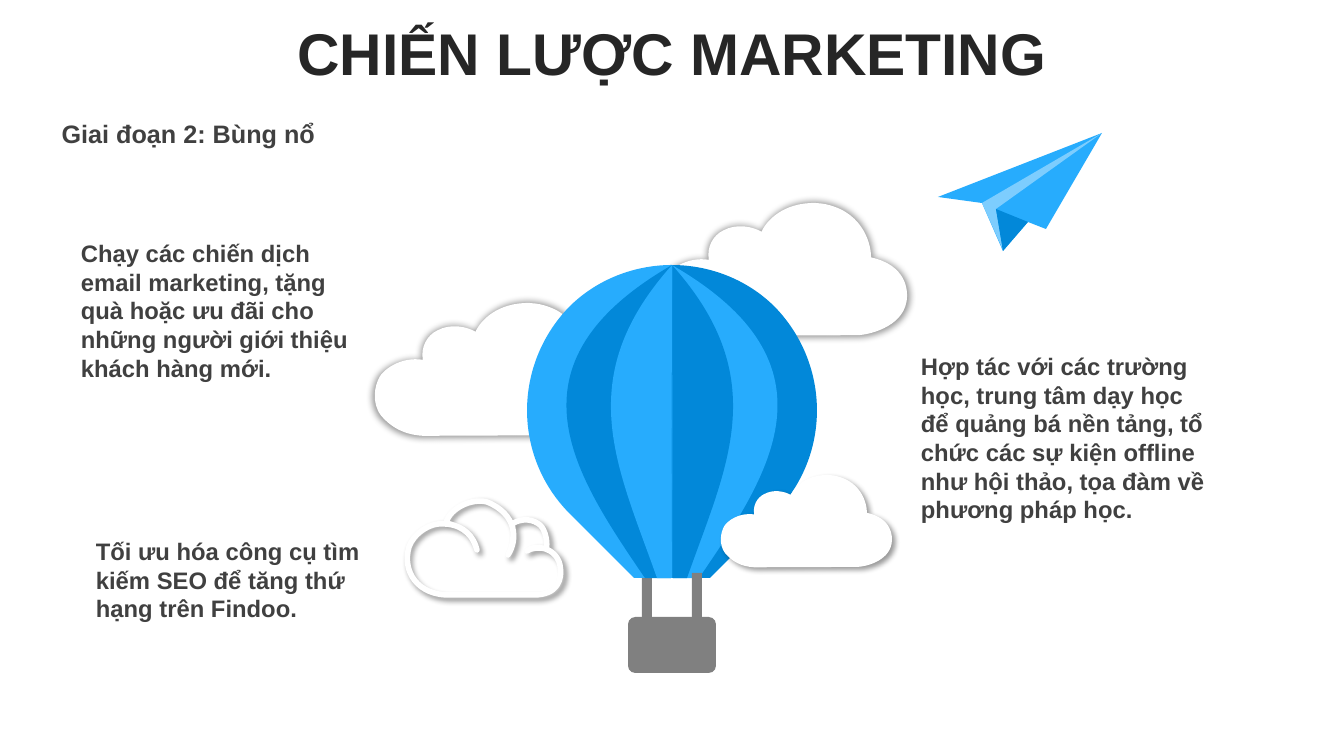
import math
import pptx
import pptx.util
import pptx.dml.color
import pptx.enum.shapes
import pptx.enum.text
import pptx.oxml.ns
import lxml.etree

COLOURS = {"title": "262626", "text": "404040", "white": "FFFFFF", "light": "27ACFD",
           "dark": "0288D9", "pale": "7DCDFE", "grey": "808080", "shadow": "000000"}
PX = 914400 / 100.8
TAG = pptx.oxml.ns.qn

# Outlines: a start point, then lines (1 point) and Bezier curves (3 points), as flat numbers
CLOUD_WIDTH = 411
CLOUD = [(258, 0), (261, 0, 265, 1, 269, 1), (333, 11, 351, 63, 351, 91),
         (410, 104, 414, 146, 410, 166), (402, 208, 346, 221, 327, 221), (80, 222),
         (49, 220, 28, 209, 10, 188), (-6, 167, -1, 138, 8, 123),
         (14, 112, 43, 89, 80, 95), (76, 74, 87, 54, 104, 46),
         (126, 34, 152, 39, 168, 48), (176, 30, 204, -1, 258, 0)]
LINE_CLOUD = [(451, 595), (534, 595), (557, 595, 563, 580, 560, 565),
              (556, 547, 534, 544, 527, 551), (531, 548, 540, 547, 546, 549),
              (548, 545, 546, 530, 540, 525), (534, 520, 523, 517, 512, 524),
              (514, 532, 514, 545, 508, 555), (518, 540, 517, 514, 487, 502),
              (472, 498, 450, 508, 446, 523), (457, 526, 471, 529, 477, 550),
              (474, 537, 464, 525, 445, 524), (429, 522, 413, 535, 409, 547),
              (402, 571, 417, 596, 451, 595)]
# Half balloon, measured from the top of its vertical axis: body, wide and narrow stripe
BALLOON_HALF = [
    [(0, 0), (0, 313), (38, 313), (103, 248), (159, 191, 159, 100, 103, 42),
     (75, 14, 37, 0, 0, 0)],
    [(0, 0), (0, 100, 1, 228, 1, 313), (27, 313), (97, 210, 173, 100, 0, 0)],
    [(0, 0), (0, 100, 1, 228, 1, 313), (15, 313), (54, 202, 102, 114, 0, 0)]]
PLANE = [("light", [(938, 197), (1102, 133), (1046, 229), (1028, 222), (1003, 251), (982, 203)]),
         ("pale", [(1102, 133), (982, 203), (1003, 250), (996, 209)]),
         ("dark", [(1028, 222), (1003, 251), (996, 209)])]


def emu(pixels):
    return round(pixels * PX)


def turn(point, degrees):
    x, y = point
    cos, sin = math.cos(math.radians(degrees)), math.sin(math.radians(degrees))
    return x * cos - y * sin, x * sin + y * cos


def bounds(segments):
    """Left, top, right and bottom of an outline, with the bulge of its curves."""
    seen = [segments[0][0]]
    for segment in segments[1:]:
        if len(segment) == 3:
            corners = [seen[-1]] + segment
            for step in range(1, 40):
                t = step / 40
                weights = [math.comb(3, k) * t ** k * (1 - t) ** (3 - k) for k in range(4)]
                seen.append(tuple(sum(w * c[axis] for w, c in zip(weights, corners))
                                  for axis in (0, 1)))
        seen.append(segment[-1])
    xs, ys = zip(*seen)
    return min(xs), min(ys), max(xs), max(ys)


class Painter:
    """Holds the style and the current slide."""

    font = "Arial"

    def __init__(self, page):
        self.page = page
        self.shapes = page.shapes

    def colour(self, name):
        return pptx.dml.color.RGBColor.from_string(COLOURS[name])

    def group(self):
        """Send the shapes that follow into a new group."""
        self.shapes = self.page.shapes.add_group_shape().shapes

    def ungroup(self):
        self.shapes = self.page.shapes

    def style(self, shape, fill=None, line=None, width=4):
        shape.shadow.inherit = False
        if fill:
            shape.fill.solid()
            shape.fill.fore_color.rgb = self.colour(fill)
        else:
            shape.fill.background()
        if line:
            shape.line.color.rgb = self.colour(line)
            shape.line.width = pptx.util.Pt(width)
        else:
            shape.line.fill.background()
        return shape

    def shadow(self, shape, blur, distance=0, angle=0, size=100):
        effects = shape._element.spPr.find(TAG("a:effectLst"))
        outer = lxml.etree.SubElement(
            effects, TAG("a:outerShdw"), blurRad=str(pptx.util.Pt(blur)),
            dist=str(pptx.util.Pt(distance)), dir=str(angle * 60000),
            sx=str(size * 1000), sy=str(size * 1000), algn="ctr", rotWithShape="0")
        tint = lxml.etree.SubElement(outer, TAG("a:srgbClr"), val=COLOURS["shadow"])
        lxml.etree.SubElement(tint, TAG("a:alpha"), val="40000")

    def outline(self, design, fill=None, line=None, left=0, top=0, scale=1, mirror=1, rotation=0):
        segments = [[turn((left + x * scale * mirror, top + y * scale), -rotation)
                     for x, y in zip(flat[::2], flat[1::2])] for flat in design]
        x0, y0, x1, y1 = bounds(segments)
        builder = self.shapes.build_freeform(emu(x0), emu(y0))
        builder.add_line_segments([(emu(x1), emu(y1))], close=True)
        shape = builder.convert_to_shape()

        # Draw lines and curves inside the frame
        route = shape._element.spPr.find(".//" + TAG("a:path"))
        for child in list(route):
            route.remove(child)
        for index, segment in enumerate(segments):
            kind = "moveTo" if index == 0 else "lnTo" if len(segment) == 1 else "cubicBezTo"
            step = lxml.etree.SubElement(route, TAG("a:" + kind))
            for x, y in segment:
                lxml.etree.SubElement(step, TAG("a:pt"), x=str(emu(x - x0)), y=str(emu(y - y0)))
        lxml.etree.SubElement(route, TAG("a:close"))

        # Turn the frame back about its centre
        x, y = turn(((x0 + x1) / 2, (y0 + y1) / 2), rotation)
        shape.left, shape.top = emu(x - (x1 - x0) / 2), emu(y - (y1 - y0) / 2)
        shape.rotation = rotation
        return self.style(shape, fill, line)

    def cloud(self, left, top, width, **shadow):
        shape = self.outline(CLOUD, "white", left=left, top=top, scale=width / CLOUD_WIDTH)
        if shadow:
            self.shadow(shape, **shadow)
        else:
            tint = shape._element.spPr.find(TAG("a:solidFill"))[0]
            lxml.etree.SubElement(tint, TAG("a:alpha"), val="70000")

    def box(self, left, top, width, height, fill, radius=None):
        kinds = pptx.enum.shapes.MSO_SHAPE
        kind = kinds.RECTANGLE if radius is None else kinds.ROUNDED_RECTANGLE
        shape = self.shapes.add_shape(kind, *map(emu, (left, top, width, height)))
        if radius is not None:
            shape.adjustments[0] = radius
        self.style(shape, fill)

    def text(self, left, top, width, height, words, size=17, colour="text", align=None):
        box = self.shapes.add_textbox(*map(emu, (left, top, width, height)))
        frame = box.text_frame
        frame.word_wrap = True
        frame.auto_size = pptx.enum.text.MSO_AUTO_SIZE.SHAPE_TO_FIT_TEXT
        para = frame.paragraphs[0]
        para.alignment = align
        span = para.add_run()
        span.text = words
        span.font.name = self.font
        span.font.size = pptx.util.Pt(size)
        span.font.bold = True
        span.font.color.rgb = self.colour(colour)
        return frame


def main():
    deck = pptx.Presentation()
    deck.slide_width, deck.slide_height = emu(1344), emu(756)
    painter = Painter(deck.slides.add_slide(deck.slide_layouts[6]))
    aligns = pptx.enum.text.PP_ALIGN

    # Title
    title = painter.text(34, 16, 1276, 80, "CHIẾN LƯỢC MARKETING", 42, "title", aligns.CENTER)
    title.auto_size = pptx.enum.text.MSO_AUTO_SIZE.NONE
    title.vertical_anchor = pptx.enum.text.MSO_ANCHOR.MIDDLE
    title.paragraphs[0].line_spacing = 0.9
    title.paragraphs[0].space_before = pptx.util.Pt(10)

    # Clouds behind the balloon: translucent, shaded, outlined
    for left, top in ((284, 174), (682, 184)):
        painter.cloud(left, top, 414)
    for left, top in ((375, 303), (661, 203)):
        painter.cloud(left, top, 246, blur=5, size=102)
    line_cloud = painter.outline(LINE_CLOUD, line="white")
    painter.shadow(line_cloud, blur=4, distance=3, angle=45)

    # Balloon: right half, ropes, mirrored left half, basket
    painter.group()
    for mirror, fills, turned in ((1, ("dark", "light", "dark"), 225),
                                  (-1, ("light", "dark", "light"), 135)):
        for design, fill, rotation in zip(BALLOON_HALF, fills, (turned, 0, 0)):
            painter.outline(design, fill, left=672, top=265, mirror=mirror, rotation=rotation)
        if mirror == 1:
            for left, top in ((642, 578), (692, 573)):
                painter.box(left, top, 10, 55, "grey")
    painter.box(628, 617, 88, 56, "grey", radius=0.13)
    painter.ungroup()

    # Cloud in front of the balloon
    painter.cloud(721, 475, 171, blur=4, distance=3, angle=45)

    # Texts
    painter.text(911, 347, 316, 183, "Hợp tác với các trường học, trung tâm dạy học để quảng bá "
                 "nền tảng, tổ chức các sự kiện offline như hội thảo, tọa đàm về phương pháp học.")
    painter.text(36, 113, 289, 40, "Giai đoạn 2: Bùng nổ", 18, align=aligns.RIGHT)
    painter.text(71, 234, 304, 154, "Chạy các chiến dịch email marketing, tặng quà hoặc ưu đãi "
                 "cho những người giới thiệu khách hàng mới.")
    painter.text(86, 532, 305, 97, "Tối ưu hóa công cụ tìm kiếm SEO để tăng thứ hạng trên Findoo.")

    # Paper plane
    painter.group()
    for fill, design in PLANE:
        painter.outline(design, fill, rotation=346)
    painter.ungroup()

    deck.save("out.pptx")


if __name__ == "__main__":
    main()
